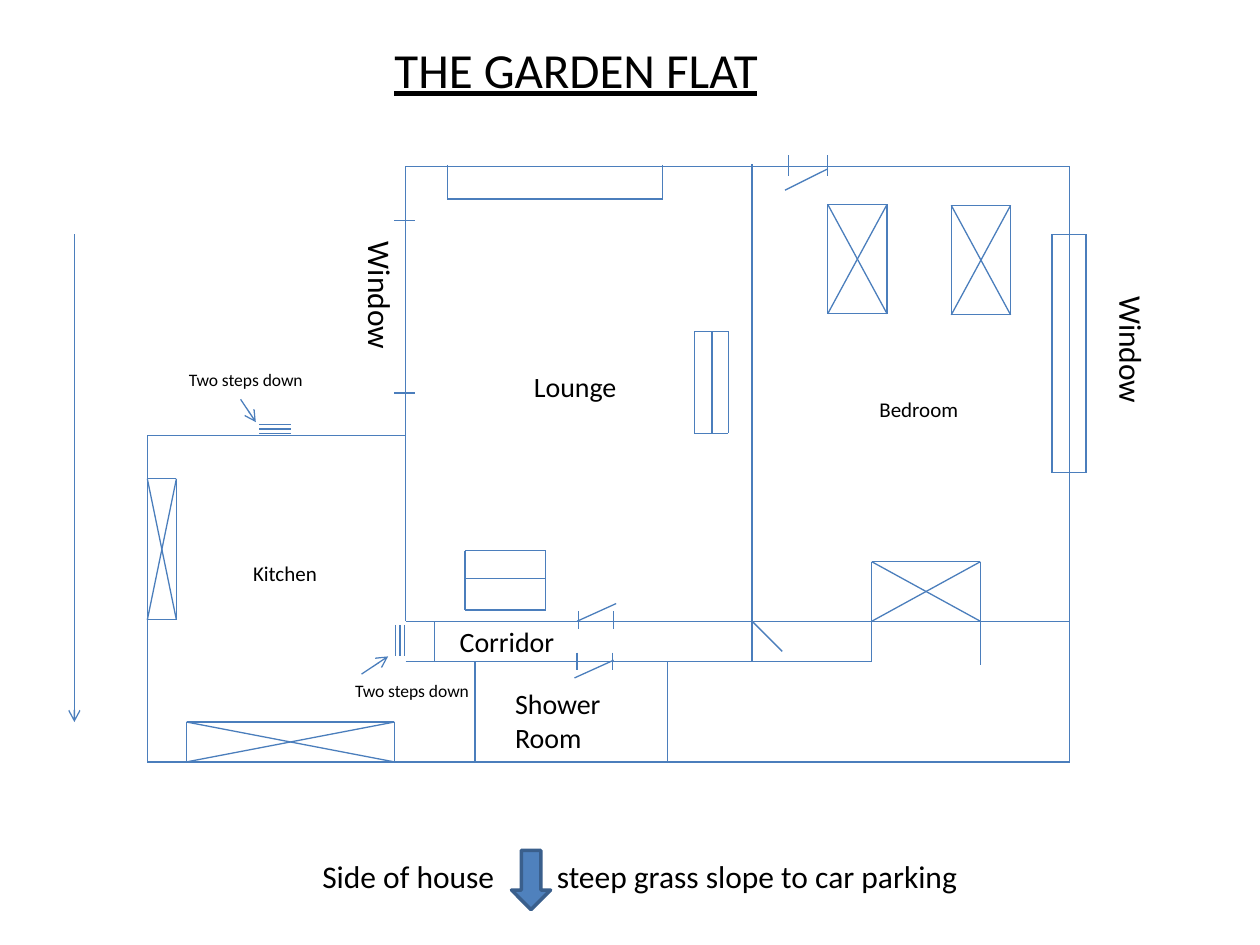
from pptx import Presentation
from pptx.dml.color import RGBColor
from pptx.enum.shapes import MSO_CONNECTOR as LINK, MSO_SHAPE as SHAPE
from pptx.enum.text import MSO_ANCHOR as ANCHOR, MSO_AUTO_SIZE as FIT, PP_ALIGN as ALIGN
from pptx.oxml.ns import qn
from pptx.util import Pt
from lxml.etree import SubElement as Sub

BLACK = RGBColor(0x00, 0x00, 0x00)
WALL = RGBColor(0x4B, 0x7E, 0xBC)
BLUE = RGBColor(0x4F, 0x81, 0xBD)
EDGE = RGBColor(0x3A, 0x5F, 0x8C)

# Main walls, in points
WEST, LOUNGE, PARTY, EAST = 84.2, 231.8, 429.8, 611.3
NORTH, KITCHEN, HALL, SHOWER, SOUTH = 95, 249, 355, 378, 435.4


class Plan:
    font = "Calibri"

    def __init__(self, deck):
        self.slide = deck.slides.add_slide(deck.slide_layouts[5])
        self.shapes = self.slide.shapes

    def add_text(self, para, text, size, under=None):
        run = para.add_run()
        run.text = text
        font = run.font
        font.name, font.size, font.underline = self.font, Pt(size), under
        font.color.rgb = BLACK

    def title(self, text, x, y, w, h, size):
        head = self.shapes.title
        head.left, head.top, head.width, head.height = Pt(x), Pt(y), Pt(w), Pt(h)
        frame = head.text_frame
        frame.auto_size, frame.vertical_anchor = FIT.NONE, ANCHOR.TOP
        para = frame.paragraphs[0]
        para.alignment = ALIGN.LEFT
        self.add_text(para, text, size, True)

    def label(self, text, x, y, w, h, size, turn=0, tab=None):
        box = self.shapes.add_textbox(Pt(x), Pt(y), Pt(w), Pt(h))
        box.rotation = turn
        frame = box.text_frame
        frame.word_wrap, frame.auto_size = True, FIT.SHAPE_TO_FIT_TEXT
        para = frame.paragraphs[0]
        self.add_text(para, text, size)
        if tab:
            stops = Sub(para._p.get_or_add_pPr(), qn("a:tabLst"))
            Sub(stops, qn("a:tab"), pos=str(Pt(tab)), algn="l")

    def line(self, x1, y1, x2, y2, arrow=False):
        link = self.shapes.add_connector(LINK.STRAIGHT, Pt(x1), Pt(y1), Pt(x2), Pt(y2))
        link.line.color.rgb, link.line.width = WALL, Pt(0.75)
        props = link._element.spPr
        if arrow:
            Sub(props.find(qn("a:ln")), qn("a:tailEnd"), type="arrow")
        Sub(props, qn("a:effectLst"))

    def rows(self, x1, x2, ys):
        for y in ys:
            self.line(x1, y, x2, y)

    def posts(self, y1, y2, xs):
        for x in xs:
            self.line(x, y1, x, y2)

    def box(self, x1, y1, x2, y2, cross=False):
        self.rows(x1, x2, (y1, y2))
        self.posts(y1, y2, (x1, x2))
        if cross:
            self.line(x1, y1, x2, y2)
            self.line(x1, y2, x2, y1)

    def door(self, leaf, y1, y2, xs):
        self.line(*leaf)
        self.posts(y1, y2, xs)

    def arrow(self, x, y, w, h):
        mark = self.shapes.add_shape(SHAPE.DOWN_ARROW, Pt(x), Pt(y), Pt(w), Pt(h))
        mark.shadow.inherit = False
        mark.fill.solid()
        mark.fill.fore_color.rgb = BLUE
        mark.line.color.rgb, mark.line.width = EDGE, Pt(2)


def draw_walls(plan):
    for wall in (
        (WEST, SOUTH, EAST, SOUTH),
        (EAST, NORTH, EAST, SOUTH),
        (LOUNGE, NORTH, EAST, NORTH),
        (WEST, KITCHEN, WEST, SOUTH),
        (WEST, KITCHEN, LOUNGE, KITCHEN),
        (LOUNGE, NORTH, LOUNGE, HALL),
        (PARTY, NORTH - 1.4, PARTY, SHOWER),
        (LOUNGE, HALL, EAST, HALL),
        (LOUNGE, SHOWER, 498.2, SHOWER),
        (498.2, HALL, 498.2, SHOWER),
        (560.2, HALL, 560.2, 380),
        (248.4, HALL, 248.4, SHOWER),
    ):
        plan.line(*wall)
    plan.posts(SHOWER, SOUTH, (271.4, 381.6))


def draw_doors(plan):
    plan.line(PARTY, HALL, 447, 372.2)
    plan.door((473, 96.5, 448.6, 108.7), 88.6, 100.8, (473, 450.7))
    plan.door((352.1, 344.9, 329.8, HALL), 349.2, 359.3, (350.6, 330.5))
    plan.door((328.3, 387.4, 350.6, 377.3), 373, 383, (329.8, 349.9))
    plan.rows(225.4, 236.9, (126, 224.6))
    plan.box(601.2, 133.9, 620.6, 270)


def draw_fittings(plan):
    for x, y in ((473, 116.8), (543.6, 117.4)):
        plan.box(x, y, x + 33.9, y + 62.5, cross=True)
    plan.box(498.2, 321, 560.2, HALL, cross=True)
    plan.box(WEST, 273.6, 100.8, 354.2, cross=True)
    plan.box(106.6, 412.6, 225.4, SOUTH, cross=True)
    plan.box(396.7, 189.4, 416.2, 247.7)
    plan.line(406.8, 189.4, 406.8, 247.7)
    plan.box(265.7, 314.6, 311.8, 348.5)
    plan.line(265.7, 330.5, 311.8, 330.5)
    plan.posts(94.3, 113.8, (255.6, 378.7))
    plan.line(255.6, 113.8, 378.7, 113.8)


def draw_steps(plan):
    plan.posts(357.1, 375.1, (226, 228.2, 229, 231))
    plan.rows(148.3, 166.3, (242.6, 245.2, 247.7))
    plan.line(206.6, 385.2, 221.8, 375.1, arrow=True)
    plan.line(137.5, 228.2, 146.2, 241.2, arrow=True)
    plan.line(42.5, 133.9, 42.5, 412.6, arrow=True)


def draw_labels(plan):
    for x, y in ((195.8, 385.2), (100.8, 207.4)):
        plan.label("Two steps down", x, y, 90, 19.4, 10)
    for x, y in ((177.8, 156.2), (607, 187.2)):
        plan.label("Window", x, y, 79.2, 29, 18, turn=90)
    plan.label("Kitchen", 137.5, 316.8, 85, 21.8, 12)
    plan.label("Bedroom", 495.4, 223.2, 85, 21.8, 12)
    plan.label("Corridor", 255.6, 353.5, 89.3, 26.6, 16)
    plan.label("Lounge", 298, 207.4, 103.7, 26.6, 16)
    plan.label("Shower Room", 287.3, 388.8, 94, 46, 16)
    plan.label("Side of house\tsteep grass slope to car parking",
               177.1, 486, 384.5, 29, 18, tab=134)


def main():
    deck = Presentation()
    deck.slide_width, deck.slide_height = Pt(720), Pt(540)
    plan = Plan(deck)
    plan.title("THE GARDEN FLAT", 218.2, 19, 272, 41, 28)
    for draw in (draw_walls, draw_doors, draw_fittings, draw_steps, draw_labels):
        draw(plan)
    plan.arrow(292.3, 486, 22.3, 33.8)
    deck.save("out.pptx")


if __name__ == "__main__":
    main()
